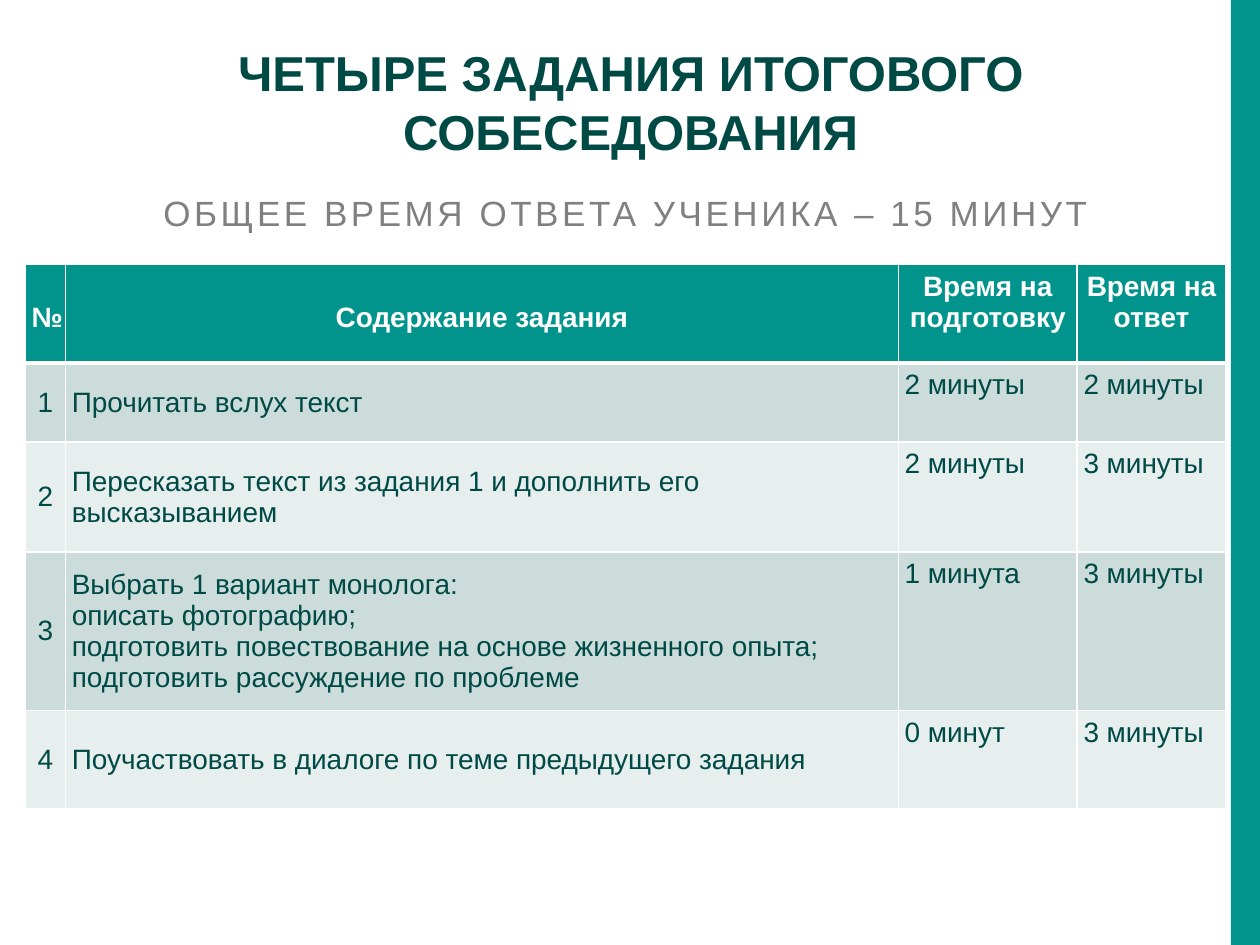
from pptx import Presentation
from pptx import util as u
from pptx.dml.color import RGBColor
from pptx.enum import shapes, text
from pptx.oxml import parse_xml
from pptx.oxml.ns import nsdecls

THEME = {
    "font": "Arial",
    "teal": "00948C", "dark": "004A46", "grey": "808080", "white": "FFFFFF",
    "bands": ("CCDCDA", "E7EEEE"),
    "heading_size": 28, "subtitle_size": 20, "table_size": 16,
}
CENTER, LEFT = text.PP_ALIGN.CENTER, text.PP_ALIGN.LEFT
TOP, MIDDLE = text.MSO_ANCHOR.TOP, text.MSO_ANCHOR.MIDDLE


def write(frame, content, size, color, bold=False, align=LEFT, spacing=1.0):
    """Fill a text frame, one paragraph per line of content."""
    frame.text = content
    for paragraph in frame.paragraphs:
        paragraph.alignment = align
        paragraph.line_spacing = spacing
        font = paragraph.runs[0].font
        for name, value in {"name": THEME["font"], "size": u.Pt(size), "bold": bold}.items():
            setattr(font, name, value)
        font.color.rgb = RGBColor.from_string(color)


def add_borders(cell, widths):
    """Add white borders; widths maps L, R, T, B (in that order) to points."""
    properties = cell._tc.get_or_add_tcPr()
    for index, (side, points) in enumerate(widths.items()):
        properties.insert(index, parse_xml(
            f'<a:ln{side} {nsdecls("a")} w="{u.Pt(points)}"><a:solidFill>'
            f'<a:srgbClr val="{THEME["white"]}"/></a:solidFill></a:ln{side}>'))


prs = Presentation()
prs.slide_width, prs.slide_height = u.Inches(10), u.Inches(7.5)
slide = prs.slides.add_slide(prs.slide_layouts[5])

# Side strip
strip = slide.shapes.add_shape(shapes.MSO_SHAPE.RECTANGLE, u.Inches(9.77), 0,
                               u.Inches(0.23), prs.slide_height)
strip.shadow.inherit = False
strip.fill.solid()
strip.fill.fore_color.rgb = RGBColor.from_string(THEME["teal"])
strip.line.fill.background()

# Subtitle line, held by the title placeholder
total_time = slide.shapes.title
for name, value in {"left": 0.2, "top": 1.47, "width": 9.53, "height": 0.47}.items():
    setattr(total_time, name, u.Inches(value))
for name, value in {"word_wrap": True, "auto_size": text.MSO_AUTO_SIZE.NONE,
                    "vertical_anchor": MIDDLE}.items():
    setattr(total_time.text_frame, name, value)
write(total_time.text_frame, "ОБЩЕЕ ВРЕМЯ ОТВЕТА УЧЕНИКА – 15 МИНУТ",
      THEME["subtitle_size"], THEME["grey"], align=CENTER, spacing=0.9)
total_time.text_frame.paragraphs[0].runs[0].font._element.set("spc", "200")

# Task table
tasks = [
    ("№", "Содержание задания", "Время на подготовку", "Время на ответ"),
    ("1", "Прочитать вслух текст", "2 минуты", "2 минуты"),
    ("2", "Пересказать текст из задания 1 и дополнить его высказыванием",
     "2 минуты", "3 минуты"),
    ("3", "Выбрать 1 вариант монолога:\nописать фотографию;\n"
          "подготовить повествование на основе жизненного опыта;\n"
          "подготовить рассуждение по проблеме", "1 минута", "3 минуты"),
    ("4", "Поучаствовать в диалоге по теме предыдущего задания",
     "0 минут", "3 минуты"),
]
column_widths = (0.32, 6.61, 1.42, 1.18)
row_heights = (0.78, 0.63, 0.87, 1.26, 0.78)
table = slide.shapes.add_table(
    len(tasks), len(column_widths), u.Inches(0.2), u.Inches(2.1),
    u.Inches(sum(column_widths)), u.Inches(sum(row_heights))).table
for column, width in zip(table.columns, column_widths):
    column.width = u.Inches(width)
for row, height in zip(table.rows, row_heights):
    row.height = u.Inches(height)

for r, task in enumerate(tasks):
    header = r == 0
    for c, content in enumerate(task):
        cell = table.cell(r, c)
        for side in ("left", "right", "top", "bottom"):
            setattr(cell, f"margin_{side}", u.Inches(0.05))
        cell.vertical_anchor = MIDDLE if not header and c < 2 else TOP
        cell.fill.solid()
        cell.fill.fore_color.rgb = RGBColor.from_string(
            THEME["teal"] if header else THEME["bands"][(r - 1) % 2])
        write(cell.text_frame, content, THEME["table_size"],
              THEME["white"] if header else THEME["dark"], bold=header,
              align=CENTER if header or c == 0 else LEFT,
              spacing=2.0 if header and c < 2 else 1.0)
        add_borders(cell, {"L": 1, "R": 1, "T": 3 if r == 1 else 1, "B": 3 if header else 1})

# Main heading
heading = slide.shapes.add_textbox(u.Inches(0.2), u.Inches(0.29),
                                   u.Inches(9.61), u.Inches(1.04))
heading.text_frame.word_wrap = True
heading.text_frame.auto_size = text.MSO_AUTO_SIZE.SHAPE_TO_FIT_TEXT
write(heading.text_frame, "ЧЕТЫРЕ ЗАДАНИЯ ИТОГОВОГО СОБЕСЕДОВАНИЯ",
      THEME["heading_size"], THEME["dark"], bold=True, align=CENTER)

prs.save("out.pptx")
